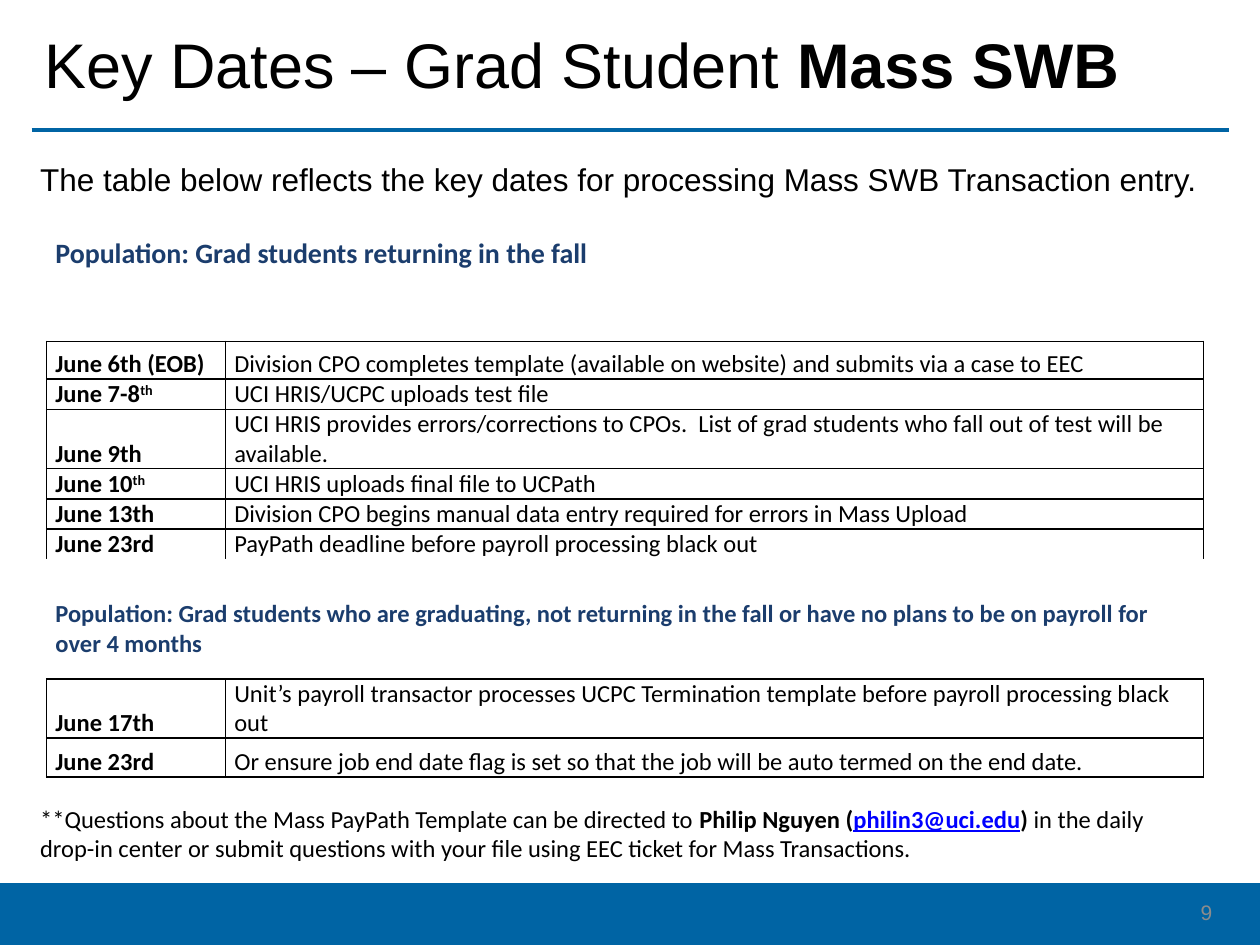
from dataclasses import dataclass

from lxml.etree import SubElement
from pptx import Presentation
from pptx.dml.color import RGBColor
from pptx.enum.shapes import MSO_CONNECTOR as CONNECTOR, MSO_SHAPE as SHAPE
from pptx.enum.text import MSO_ANCHOR as ANCHOR, MSO_AUTO_SIZE as AUTO_SIZE, PP_ALIGN as ALIGN
from pptx.oxml.ns import qn
from pptx.util import Inches, Pt


@dataclass(frozen=True)
class Theme:
    blue: str = "0064A4"
    navy: str = "1B3D6D"
    black: str = "000000"
    gray: str = "8C8C8C"
    link: str = "0000FF"
    sans: str = "Arial"
    body: str = "Calibri"
    title_size: int = 36
    intro_size: int = 18
    heading_size: int = 16
    text_size: int = 14
    number_size: int = 12
    spacer_size: int = 6


THEME = Theme()

RETURNING = [
    ("June 6th (EOB)", "", 0.3,
     "Division CPO completes template (available on website) and submits via a case to EEC"),
    ("June 7-8", "th", 0.24, "UCI HRIS/UCPC uploads test file"),
    ("June 9th", "", 0.47,
     "UCI HRIS provides errors/corrections to CPOs.\u00a0 List of grad students who fall out "
     "of test will be available."),
    ("June 10", "th", 0.24, "UCI HRIS uploads final file to UCPath"),
    ("June 13th", "", 0.24,
     "Division CPO begins manual data entry required for errors in Mass Upload"),
    ("June 23rd", "", 0.24, "PayPath deadline before payroll processing black out"),
]
LEAVING = [
    ("June 17th", "", 0.47,
     "Unit’s payroll transactor processes UCPC Termination template before payroll "
     "processing black out"),
    ("June 23rd", "", 0.31,
     "Or ensure job end date flag is set so that the job will be auto termed on the end date."),
]


def add_run(p, text, size=THEME.text_size, font=THEME.body, color=THEME.black,
            bold=False, underline=False, raised=False):
    r = p.add_run()
    r.text = text
    r.font.size = Pt(size)
    r.font.name = font
    r.font.bold = bold
    r.font.color.rgb = RGBColor.from_string(color)
    if underline:
        r.font.underline = True
    if raised:
        r.font._element.set("baseline", "30000")


def add_text(slide, box, anchor=ANCHOR.TOP, align=ALIGN.LEFT):
    tf = slide.shapes.add_textbox(*map(Inches, box)).text_frame
    tf.word_wrap = True
    tf.vertical_anchor = anchor
    p = tf.paragraphs[0]
    p.alignment = align
    return p


def add_rule(slide, left, right, y):
    line = slide.shapes.add_connector(
        CONNECTOR.STRAIGHT, Inches(left), Inches(y), Inches(right), Inches(y))
    line.line.color.rgb = RGBColor.from_string(THEME.blue)
    line.line.width = Pt(2.25)
    SubElement(line._element.spPr, qn("a:effectLst"))


def add_footer(slide):
    sp = slide.shapes.add_shape(SHAPE.RECTANGLE, *map(Inches, (0, 7.01, 10, 0.5)))
    sp.shadow.inherit = False
    sp.fill.solid()
    sp.fill.fore_color.rgb = RGBColor.from_string(THEME.blue)
    sp.line.fill.background()
    p = add_text(slide, (7.47, 7.04, 2.25, 0.4), ANCHOR.MIDDLE, ALIGN.RIGHT)
    add_run(p, "9", THEME.number_size, THEME.sans, THEME.gray)


def set_title(slide):
    title = slide.shapes.title
    title.left, title.top, title.width, title.height = map(Inches, (0.25, 0.05, 9.5, 0.98))
    tf = title.text_frame
    tf.auto_size = AUTO_SIZE.NONE
    tf.vertical_anchor = ANCHOR.MIDDLE
    p = tf.paragraphs[0]
    p.alignment = ALIGN.LEFT
    p.line_spacing = 0.9
    add_run(p, "Key Dates – Grad Student ", THEME.title_size, THEME.sans)
    add_run(p, "Mass SWB", THEME.title_size, THEME.sans, bold=True)


def border_cell(cell):
    tc_pr = cell._tc.get_or_add_tcPr()
    for i, side in enumerate(("lnL", "lnR", "lnT", "lnB")):
        ln = tc_pr.makeelement(qn(f"a:{side}"), {"w": str(Pt(1))})
        fill = SubElement(ln, qn("a:solidFill"))
        SubElement(fill, qn("a:srgbClr"), val=THEME.black)
        tc_pr.insert(i, ln)


def prepare_cell(cell):
    cell.fill.background()
    cell.vertical_anchor = ANCHOR.BOTTOM
    cell.margin_left = cell.margin_right = Inches(0.07)
    cell.margin_top = cell.margin_bottom = 0
    end = SubElement(cell.text_frame.paragraphs[0]._p, qn("a:endParaRPr"))
    end.set("sz", str(THEME.spacer_size * 100))


def fill_heading(table, row, text, size, gap_below=0):
    cell = table.cell(row, 0)
    cell.merge(table.cell(row, 1))
    cell.margin_bottom = Inches(gap_below)
    add_run(cell.text_frame.paragraphs[0], text, size, color=THEME.navy, bold=True)


def fill_dates(table, first, entries):
    for row, (date, suffix, _, action) in enumerate(entries, first):
        left, right = table.cell(row, 0), table.cell(row, 1)
        p = left.text_frame.paragraphs[0]
        add_run(p, date, bold=True)
        if suffix:
            add_run(p, suffix, bold=True, raised=True)
        add_run(right.text_frame.paragraphs[0], action)
        border_cell(left)
        border_cell(right)


def add_dates_table(slide):
    heights = [0.68, 0.19, *(e[2] for e in RETURNING), 0.16, 0.16, 0.47, 0.16,
               *(e[2] for e in LEAVING)]
    widths = [1.42, 7.76]
    table = slide.shapes.add_table(
        len(heights), len(widths), Inches(0.37), Inches(1.84),
        Inches(sum(widths)), Inches(sum(heights))).table
    table.first_row = table.horz_banding = False
    for column, width in zip(table.columns, widths):
        column.width = Inches(width)
    for row, height in zip(table.rows, heights):
        row.height = Inches(height)
    for cell in table.iter_cells():
        prepare_cell(cell)
    fill_heading(table, 0, "Population: Grad students returning in the fall",
                 THEME.heading_size, gap_below=0.37)
    table.cell(1, 0).merge(table.cell(1, 1))
    fill_dates(table, 2, RETURNING)
    leaving_row = len(heights) - len(LEAVING)
    fill_heading(table, leaving_row - 2,
                 "Population: Grad students who are graduating, not returning in the fall "
                 "or have no plans to be on payroll for over 4 months", THEME.text_size)
    fill_dates(table, leaving_row, LEAVING)


def add_contact(slide):
    p = add_text(slide, (0.22, 6.33, 9.32, 0.57))
    add_run(p, "**Questions about the Mass PayPath Template can be directed to ")
    add_run(p, "Philip Nguyen (", bold=True)
    add_run(p, "philin3@uci.edu", color=THEME.link, bold=True, underline=True)
    add_run(p, ")", bold=True)
    add_run(p, " in the daily drop-in center or submit questions with your file using "
               "EEC ticket for Mass Transactions.")


def main():
    prs = Presentation()
    prs.slide_width, prs.slide_height = Inches(10), Inches(7.5)
    slide = prs.slides.add_slide(prs.slide_layouts[5])
    add_rule(slide, 0.25, 9.75, 1.03)
    add_footer(slide)
    set_title(slide)
    add_dates_table(slide)
    add_contact(slide)
    intro = add_text(slide, (0.22, 1.22, 9.75, 0.4))
    add_run(intro, "The table below reflects the key dates for processing Mass SWB "
                   "Transaction entry.", THEME.intro_size, THEME.sans)
    prs.save("out.pptx")


if __name__ == "__main__":
    main()
